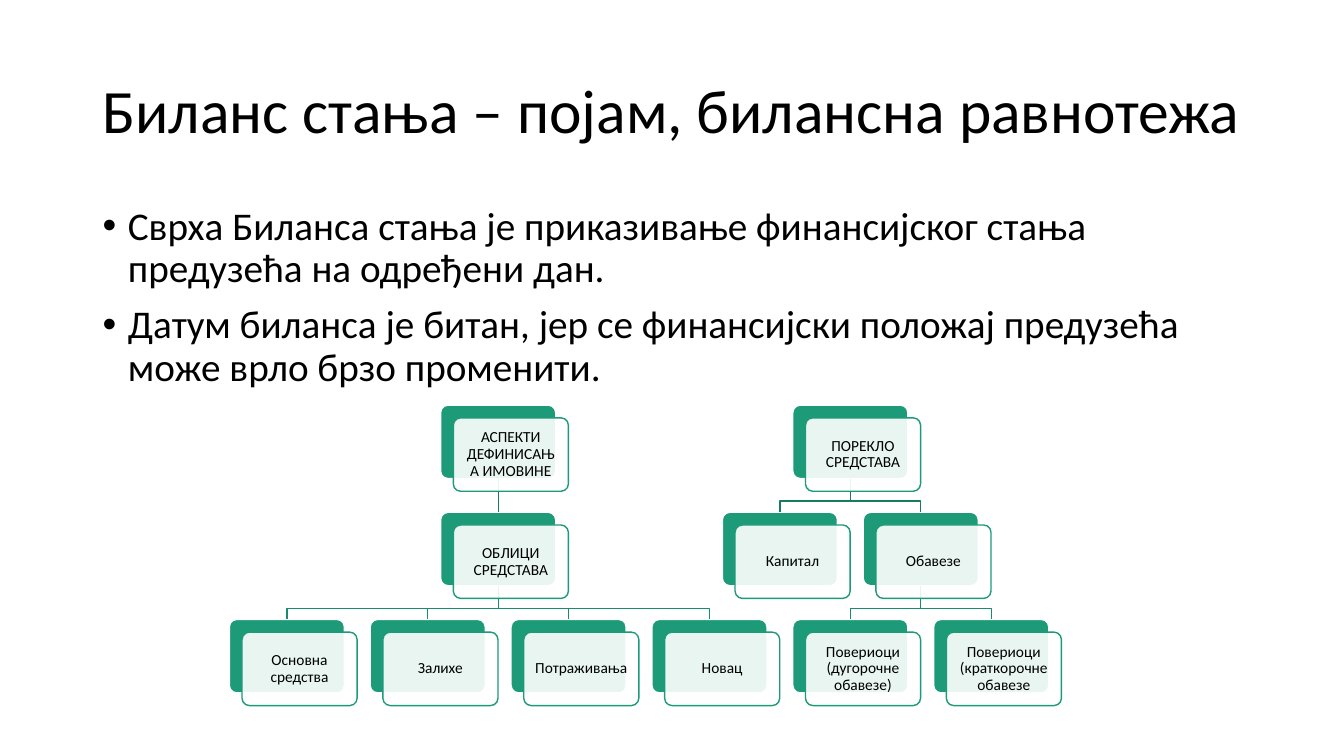
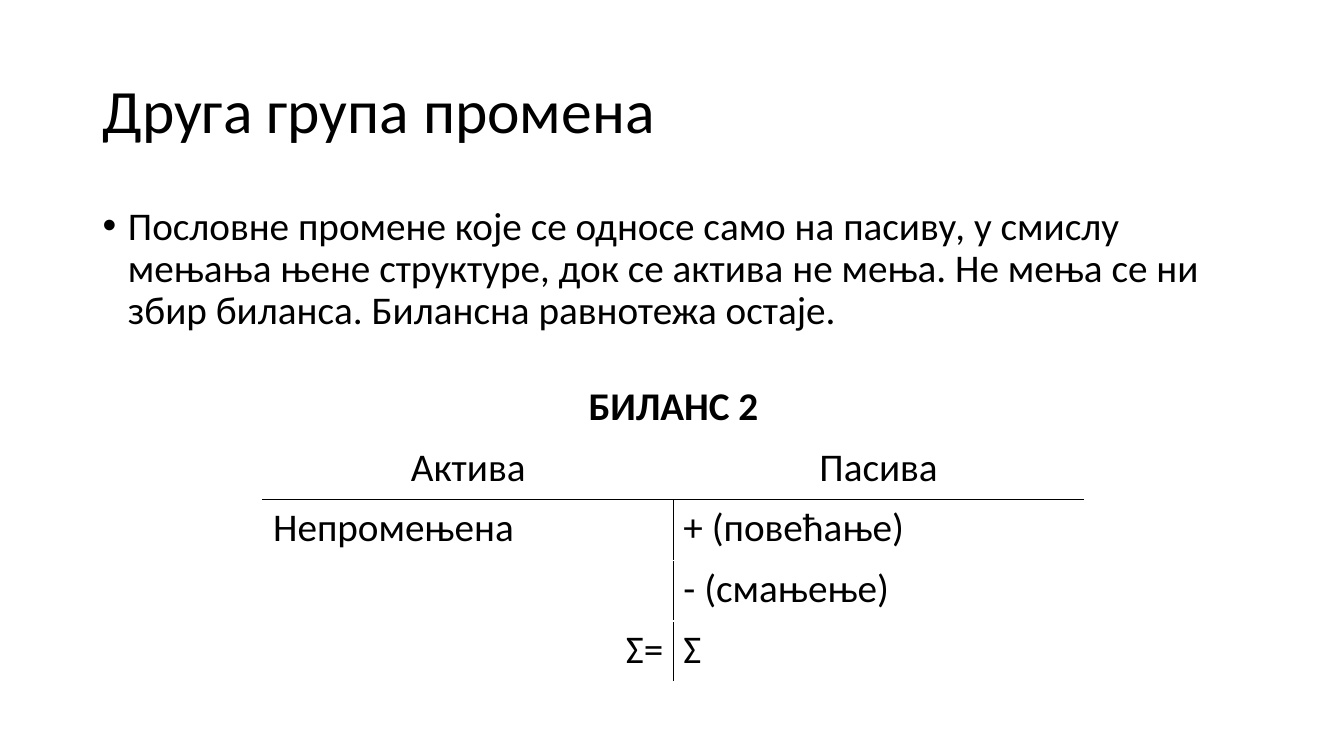
import pptx
import pptx.util
import pptx.dml.color
import pptx.enum.shapes
import pptx.enum.text
import pptx.oxml
import pptx.oxml.ns
from pptx.util import Cm, Pt

FONT = "Calibri"
BLACK, WHITE, GREEN = "000000", "FFFFFF", "1D9A78"
BRANCH_COLOURS = ["177B60", "1A8C6D"]
ALIGN = pptx.enum.text.PP_ALIGN
CARD_WIDTH, CARD_HEIGHT, CARD_OFFSET = 2.9, 1.85, 0.32
ELBOW_DROP = 0.57


def colour(hex_code):
    return pptx.dml.color.RGBColor.from_string(hex_code)


def add_card(page, left, top, fill, line):
    card = page.shapes.add_shape(
        pptx.enum.shapes.MSO_SHAPE.ROUNDED_RECTANGLE,
        Cm(left), Cm(top), Cm(CARD_WIDTH), Cm(CARD_HEIGHT))
    card.adjustments[0] = 0.1
    card.shadow.inherit = False
    card.fill.solid()
    card.fill.fore_color.rgb = colour(fill)
    card.line.color.rgb = colour(line)
    card.line.width = Pt(1)
    return card


deck = pptx.Presentation()
deck.slide_width, deck.slide_height = Cm(33.87), Cm(19.05)

contents = [
    ("Биланс стања – појам, билансна равнотежа", [
        "Сврха Биланса стања је приказивање финансијског стања предузећа на одређени дан.",
        "Датум биланса је битан, јер се финансијски положај предузећа може врло брзо променити.",
    ]),
    ("Друга група промена", [
        "Пословне промене које се односе само на пасиву, у смислу мењања њене структуре, "
        "док се актива не мења. Не мења се ни збир биланса. Билансна равнотежа остаје.",
    ]),
]

for heading, points in contents:
    page = deck.slides.add_slide(deck.slide_layouts[1])
    title, body = page.placeholders
    title.text_frame.text = heading
    body.text_frame.text = "\n".join(points)
    for box, top, height, size in [(title, 1.01, 3.68, 44), (body, 5.07, 12.09, 28)]:
        box.left, box.top, box.width, box.height = Cm(2.33), Cm(top), Cm(29.21), Cm(height)
        box.text_frame.auto_size = pptx.enum.text.MSO_AUTO_SIZE.NONE
        for para in box.text_frame.paragraphs:
            para.alignment = ALIGN.LEFT
            para.line_spacing = 0.9
            para.font.name = FONT
            para.font.size = Pt(size)
            para.font.color.rgb = colour(BLACK)
    title.text_frame.vertical_anchor = pptx.enum.text.MSO_ANCHOR.MIDDLE
    for index, para in enumerate(body.text_frame.paragraphs):
        para.space_before = Pt(10 if index else 0)
        properties = para._p.get_or_add_pPr()
        properties.set("marL", str(Cm(0.64)))
        properties.set("indent", str(-Cm(0.64)))

balance_page, change_page = deck.slides

nodes = [
    ("АСПЕКТИ ДЕФИНИСАЊА ИМОВИНЕ", 1.5, 0, None),
    ("ОБЛИЦИ СРЕДСТАВА", 1.5, 1, 0),
    ("Основна средства", 0, 2, 1),
    ("Залихе", 1, 2, 1),
    ("Потраживања", 2, 2, 1),
    ("Новац", 3, 2, 1),
    ("ПОРЕКЛО СРЕДСТАВА", 4, 0, None),
    ("Капитал", 3.5, 1, 6),
    ("Обавезе", 4.5, 1, 6),
    ("Повериоци (дугорочне обавезе)", 4, 2, 8),
    ("Повериоци (краткорочне обавезе", 5, 2, 8),
]
places = [(5.78 + 3.55 * column, 10.21 + 2.7 * row) for _, column, row, _ in nodes]
backs = [add_card(balance_page, left, top, GREEN, WHITE) for left, top in places]

for child, (_, _, row, parent) in enumerate(nodes):
    if parent is None:
        continue
    start_x, end_x = [Cm(places[node][0] + CARD_WIDTH / 2) for node in (parent, child)]
    start_y, end_y = Cm(places[parent][1] + CARD_HEIGHT), Cm(places[child][1])
    if start_x == end_x:
        branch = balance_page.shapes.add_connector(
            pptx.enum.shapes.MSO_CONNECTOR.STRAIGHT, start_x, start_y, end_x, end_y)
        branch.begin_connect(backs[parent], 2)
        branch.end_connect(backs[child], 0)
        branch.element.spPr.append(pptx.oxml.parse_xml(
            f'<a:effectLst {pptx.oxml.ns.nsdecls("a")}/>'))
    else:
        elbow_y = start_y + Cm(ELBOW_DROP)
        outline = balance_page.shapes.build_freeform(start_x, start_y)
        outline.add_line_segments(
            [(start_x, elbow_y), (end_x, elbow_y), (end_x, end_y)], close=False)
        branch = outline.convert_to_shape()
        branch.fill.background()
        branch.shadow.inherit = False
    branch.line.color.rgb = colour(BRANCH_COLOURS[row - 1])
    branch.line.width = Pt(1)

for (label, *_), (left, top) in zip(nodes, places):
    card = add_card(balance_page, left + CARD_OFFSET, top + CARD_OFFSET, WHITE, GREEN)
    fill_colour = card.element.spPr.xpath("./a:solidFill/a:srgbClr")[0]
    fill_colour.append(pptx.oxml.parse_xml(
        f'<a:alpha {pptx.oxml.ns.nsdecls("a")} val="90000"/>'))
    frame = card.text_frame
    frame.word_wrap = True
    frame.margin_left = frame.margin_right = Cm(0.18)
    frame.margin_top = frame.margin_bottom = Cm(0.18)
    frame.vertical_anchor = pptx.enum.text.MSO_ANCHOR.MIDDLE
    frame.text = label
    para = frame.paragraphs[0]
    para.alignment = ALIGN.CENTER
    para.line_spacing = 0.9
    para.font.name = FONT
    para.font.size = Pt(11)
    para.font.color.rgb = colour(BLACK)

rows = [
    ("БИЛАНС 2", ""),
    ("Актива", "Пасива"),
    ("Непромењена", "+ (повећање)"),
    ("", "- (смањење)"),
    ("Ʃ=", "Ʃ"),
]
table = change_page.shapes.add_table(
    len(rows), 2, Cm(6.63), Cm(9.53), Cm(20.68), Cm(1.53 * len(rows))).table
table.first_row = table.horz_banding = False
table.cell(0, 0).merge(table.cell(0, 1))

for row, texts in enumerate(rows):
    for column, text in enumerate(texts):
        cell = table.cell(row, column)
        black_sides = {1: ["B"], 2: ["R" if column == 0 else "L", "T"]}.get(
            row, ["R" if column == 0 else "L"] if row > 2 else [])
        for side in "LRTB":
            line_colour = BLACK if side in black_sides else WHITE
            cell._tc.get_or_add_tcPr().append(pptx.oxml.parse_xml(
                f'<a:ln{side} {pptx.oxml.ns.nsdecls("a")} w="{Pt(1)}"><a:solidFill>'
                f'<a:srgbClr val="{line_colour}"/></a:solidFill></a:ln{side}>'))
        cell.fill.solid()
        cell.fill.fore_color.rgb = colour(WHITE)
        cell.text = text
        para = cell.text_frame.paragraphs[0]
        if row < 2:
            para.alignment = ALIGN.CENTER
        elif text == "Ʃ=":
            para.alignment = ALIGN.RIGHT
        para.font.name = FONT
        para.font.size = Pt(28)
        para.font.bold = row == 0
        para.font.color.rgb = colour(BLACK)

deck.save("out.pptx")
